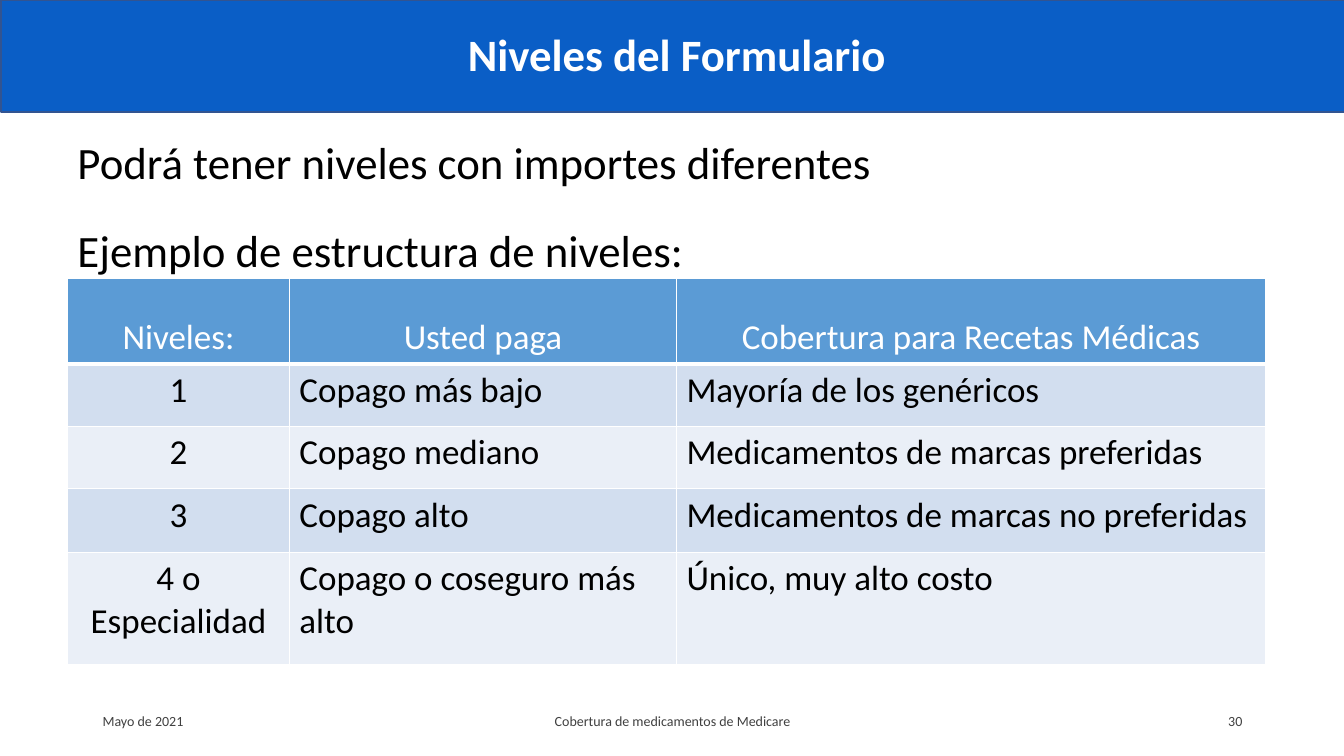
"""Build the slide on formulary tiers."""
import pptx
import pptx.util
import pptx.dml.color
import pptx.enum.shapes
import pptx.enum.text
import pptx.oxml
import pptx.oxml.ns

Inches = pptx.util.Inches
Pt = pptx.util.Pt
ALIGN = pptx.enum.text.PP_ALIGN
ANCHOR = pptx.enum.text.MSO_ANCHOR


def color(value):
    """Return the colour of a hex string."""
    return pptx.dml.color.RGBColor.from_string(value)


def write(p, text, size, hex_color, align=ALIGN.LEFT, bold=False):
    """Fill a paragraph with one run."""
    p.alignment = align
    r = p.add_run()
    r.text = text
    r.font.name = "Calibri"
    r.font.size = Pt(size)
    r.font.bold = bold
    r.font.color.rgb = color(hex_color)


prs = pptx.Presentation()
prs.slide_width = Inches(13.33)
prs.slide_height = Inches(7.5)
s = prs.slides.add_slide(prs.slide_layouts[6])

banner = s.shapes.add_shape(
    pptx.enum.shapes.MSO_SHAPE.RECTANGLE, Inches(0.01), 0, Inches(13.33), Inches(1.11))
banner.shadow.inherit = False
banner.fill.solid()
banner.fill.fore_color.rgb = color("0A5EC6")
banner.line.color.rgb = color("325491")
banner.line.width = Pt(1)

footers = [
    (0.92, 3, "Mayo de 2021", ALIGN.LEFT),
    (4.42, 4.5, "Cobertura de medicamentos de Medicare", ALIGN.CENTER),
    (9.42, 3, "30", ALIGN.RIGHT),
]
for left, width, text, align in footers:
    sp = s.shapes.add_textbox(Inches(left), Inches(6.95), Inches(width), Inches(0.4))
    tf = sp.text_frame
    tf.word_wrap = True
    tf.vertical_anchor = ANCHOR.MIDDLE
    write(tf.paragraphs[0], text, 10, "404040", align)

col_widths = [2.2, 3.84, 5.84]
row_heights = [0.85, 0.62, 0.62, 0.63, 1.11]
rows = [
    ("Niveles:", "Usted paga", "Cobertura para Recetas Médicas"),
    ("1", "Copago más bajo", "Mayoría de los genéricos"),
    ("2", "Copago mediano", "Medicamentos de marcas preferidas"),
    ("3", "Copago alto", "Medicamentos de marcas no preferidas"),
    ("4 o Especialidad", "Copago o coseguro más alto", "Único, muy alto costo"),
]
table = s.shapes.add_table(
    len(rows), len(col_widths), Inches(0.67), Inches(2.76),
    Inches(sum(col_widths)), Inches(sum(row_heights))).table
for col, width in zip(table.columns, col_widths):
    col.width = Inches(width)
for row, height in zip(table.rows, row_heights):
    row.height = Inches(height)

for i, texts in enumerate(rows):
    header = i == 0
    for j, text in enumerate(texts):
        cell = table.cell(i, j)
        cell.fill.solid()
        cell.fill.fore_color.rgb = color(
            "5B9BD5" if header else "D2DEEF" if i % 2 else "EAEFF7")
        cell.vertical_anchor = ANCHOR.BOTTOM if header else ANCHOR.TOP
        align = ALIGN.CENTER if header or j == 0 else ALIGN.LEFT
        write(cell.text_frame.paragraphs[0], text, 25,
              "FFFFFF" if header else "000000", align)
        tc_pr = cell._tc.get_or_add_tcPr()
        for k, side in enumerate("LRTB"):
            thick = (header and side == "B") or (i == 1 and side == "T")
            tc_pr.insert(k, pptx.oxml.parse_xml(
                f'<a:ln{side} {pptx.oxml.ns.nsdecls("a")} w="{Pt(3 if thick else 1)}">'
                f'<a:solidFill><a:srgbClr val="FFFFFF"/></a:solidFill></a:ln{side}>'))

sp = s.shapes.add_textbox(Inches(0.67), Inches(1.29), Inches(12.09), Inches(5.49))
tf = sp.text_frame
tf.word_wrap = True
write(tf.paragraphs[0], "Podrá tener niveles con importes diferentes", 32, "000000")
p = tf.add_paragraph()
p.space_before = Pt(24)
write(p, "Ejemplo de estructura de niveles:", 32, "000000")

sp = s.shapes.add_textbox(Inches(0.38), Inches(0.01), Inches(12.67), Inches(1.12))
tf = sp.text_frame
tf.word_wrap = True
tf.vertical_anchor = ANCHOR.MIDDLE
p = tf.paragraphs[0]
p.line_spacing = 0.9
write(p, "Niveles del Formulario", 32, "FFFFFF", ALIGN.CENTER, bold=True)

prs.save("out.pptx")
